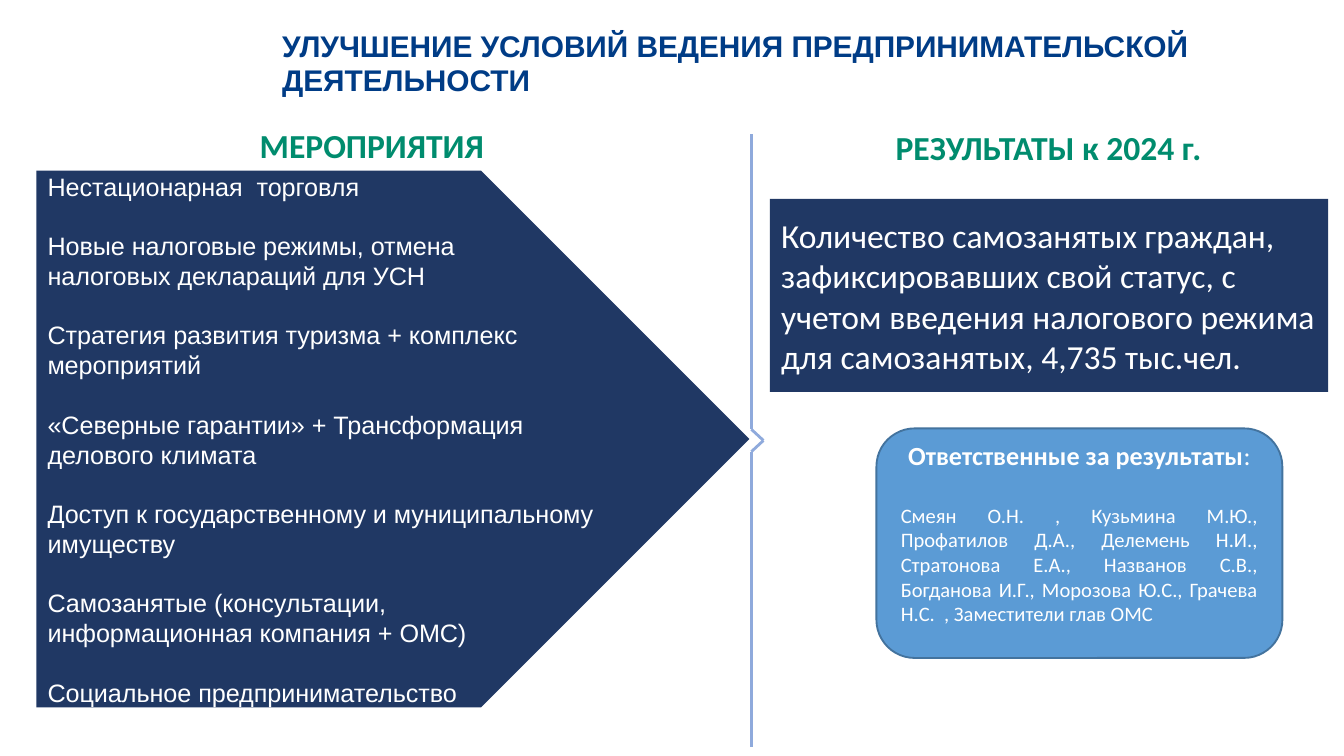
from itertools import pairwise
from lxml.etree import SubElement
from pptx import Presentation
from pptx.dml.color import RGBColor
from pptx.enum.shapes import MSO_CONNECTOR as Line, MSO_SHAPE as Shape
from pptx.enum.text import MSO_ANCHOR as Anchor, MSO_AUTO_SIZE as Fit, PP_ALIGN as Align
from pptx.oxml.ns import qn
from pptx.util import Pt

HUES = {"title": "003C86", "head": "008C6E", "navy": "203864", "blue": "5B9BD5",
        "edge": "43739E", "rule": "8FAADC", "white": "FFFFFF"}
STEPS = [
    ["Нестационарная  торговля"],
    ["Новые налоговые режимы, отмена", "налоговых деклараций для УСН"],
    ["Стратегия развития туризма + комплекс мероприятий"],
    ["«Северные гарантии» + Трансформация делового климата"],
    ["Доступ к государственному и муниципальному имуществу"],
    ["Самозанятые (консультации,", "информационная компания + ОМС)"],
    ["Социальное предпринимательство"],
]
GOAL = ("Количество самозанятых граждан, зафиксировавших свой статус, с учетом "
        "введения налогового режима для самозанятых, 4,735 тыс.чел.")
TEAM = ("Смеян О.Н. , Кузьмина М.Ю., Профатилов Д.А., Делемень Н.И., "
        "Стратонова Е.А., Названов С.В., Богданова И.Г., Морозова Ю.С., "
        "Грачева Н.С.  , Заместители глав ОМС")


def tint(name):
    return RGBColor.from_string(HUES[name])


class Deck:
    def __init__(self, wide, high):
        self.prs = Presentation()
        self.prs.slide_width, self.prs.slide_height = Pt(wide), Pt(high)
        self.slide = self.prs.slides.add_slide(self.prs.slide_layouts[5])
        self.items = self.slide.shapes

    def style(self, para, size, hue="white", font="Calibri", bold=False, align=Align.LEFT):
        para.alignment = align
        for run in para.runs:
            run.font.size, run.font.name, run.font.bold = Pt(size), font, bold
            run.font.color.rgb = tint(hue)

    def frame(self, item, side=6, edge=3.5, anchor=Anchor.MIDDLE):
        box = item.text_frame
        box.word_wrap, box.auto_size = True, Fit.NONE
        box.vertical_anchor = anchor
        box.margin_left = box.margin_right = Pt(side)
        box.margin_top = box.margin_bottom = Pt(edge)
        return box

    def title(self, text, x, y, w, h):
        item = self.items.title
        item.left, item.top, item.width, item.height = map(Pt, (x, y, w, h))
        box = self.frame(item, 7.2, 3.6, Anchor.TOP)
        box.text = text
        box.paragraphs[0].line_spacing = 0.95
        self.style(box.paragraphs[0], 16, "title", "Arial", True)

    def head(self, text, x, y, w, h):
        box = self.frame(self.items.add_textbox(*map(Pt, (x, y, w, h))))
        box.text = text
        self.style(box.paragraphs[0], 18, "head", bold=True, align=Align.CENTER)

    def block(self, kind, x, y, w, h, fill, edge=None):
        item = self.items.add_shape(kind, *map(Pt, (x, y, w, h)))
        item.shadow.inherit = False
        item.fill.solid()
        item.fill.fore_color.rgb = tint(fill)
        if edge:
            item.line.color.rgb = tint(edge)
            item.line.width = Pt(1)
        else:
            item.line.fill.background()
        return item

    def rule(self, points):
        for start, end in pairwise(points):
            item = self.items.add_connector(Line.STRAIGHT, *map(Pt, start + end))
            item.line.color.rgb = tint("rule")
            item.line.width = Pt(1.5)
            SubElement(item._element.spPr, qn("a:effectLst"))

    def steps(self, groups, *place):
        box = self.frame(self.block(Shape.PENTAGON, *place, "navy"))
        box.text = "\n".join(line for group in groups for line in group)
        firsts = {group[0] for group in groups[1:]}
        for para in box.paragraphs:
            self.style(para, 13.5, font="Arial")
            if para.text in firsts:
                para.space_before = Pt(15.5)

    def goal(self, text, *place):
        box = self.frame(self.block(Shape.RECTANGLE, *place, "navy"))
        box.text = text
        self.style(box.paragraphs[0], 18)

    def team(self, label, names, *place):
        item = self.block(Shape.ROUNDED_RECTANGLE, *place, "blue", "edge")
        box = self.frame(item, 7.2, 0, Anchor.TOP)
        top = box.paragraphs[0]
        top.text = label
        top.add_run().text = ":"
        self.style(top, 14, bold=True, align=Align.CENTER)
        top.runs[1].font.bold = False
        body = box.add_paragraph()
        body.text = names
        body.space_before = Pt(17)
        self.style(body, 11, align=Align.JUSTIFY)


def main():
    deck = Deck(720, 405)
    deck.title("УЛУЧШЕНИЕ УСЛОВИЙ ВЕДЕНИЯ ПРЕДПРИНИМАТЕЛЬСКОЙ ДЕЯТЕЛЬНОСТИ",
               144, 12.5, 556.5, 38)
    deck.head("МЕРОПРИЯТИЯ", 19, 64, 360.5, 27.5)
    deck.rule([(402.5, 72), (402.5, 230), (409, 236), (402.5, 242), (402.5, 400)])
    deck.head("РЕЗУЛЬТАТЫ к 2024 г.", 422.5, 65, 278.5, 27.5)
    deck.steps(STEPS, 19.5, 91.5, 382, 287.5)
    deck.goal(GOAL, 412.5, 106.5, 299, 103.5)
    deck.team("Ответственные за результаты", TEAM, 469.5, 229.5, 217.5, 123)
    deck.prs.save("out.pptx")


if __name__ == "__main__":
    main()
